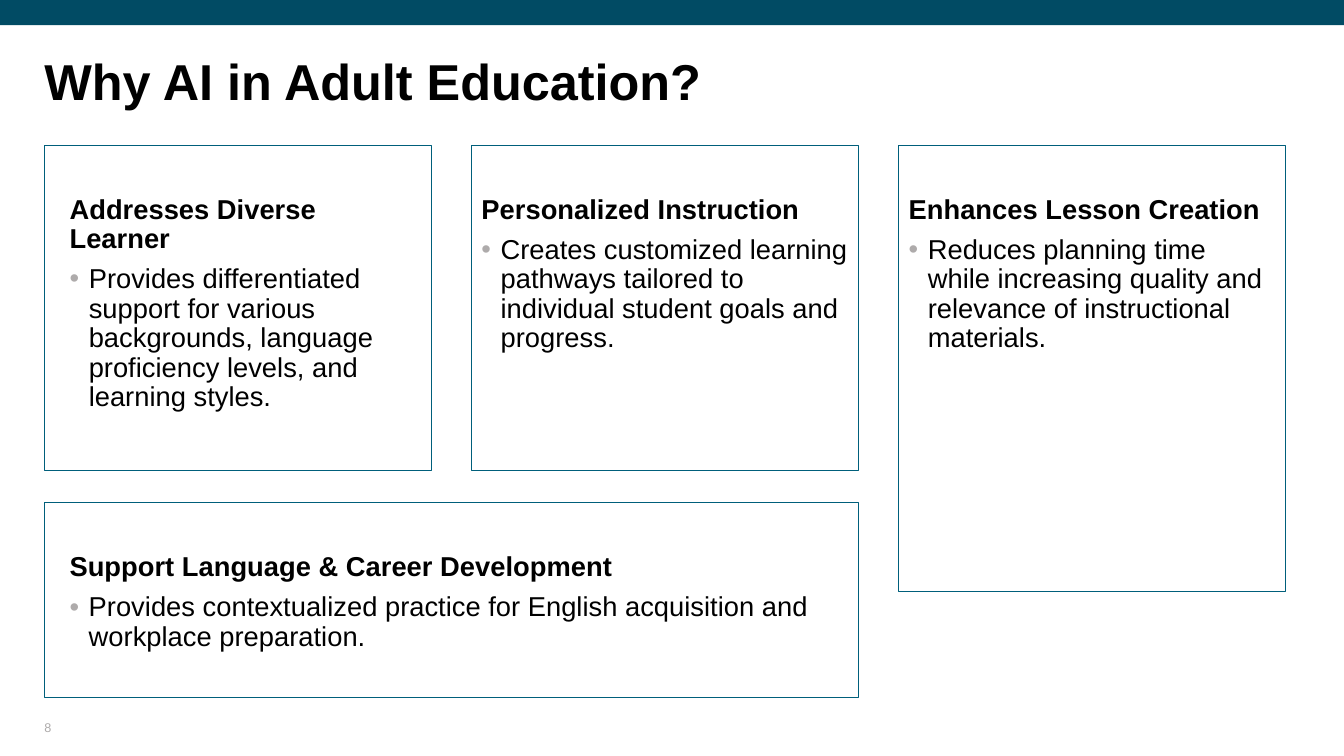
import lxml.etree
import pptx
import pptx.dml.color
import pptx.enum.shapes
import pptx.enum.text
import pptx.oxml.ns
import pptx.util

COLORS = {"band": "014B64", "border": "005F7B", "text": "000000", "muted": "AEABAB"}
WIDTH, HEIGHT = 13.33, 7.5
LEFT, TOP = 0.44, 1.44
COLUMN_GAP, ROW_GAP = 0.4, 0.32
COLUMN_STEP = (12.31 + COLUMN_GAP) / 3
ROW_STEP = 0.05

CARDS = [
    (0, 0, 1, 71, 0.25, "Addresses Diverse Learner",
     "Provides differentiated support for various backgrounds, language proficiency levels, and learning styles."),
    (1, 0, 1, 71, 0.1, "Personalized Instruction",
     "Creates customized learning pathways tailored to individual student goals and progress."),
    (2, 0, 1, 95, 0.1, "Enhances Lesson Creation",
     "Reduces planning time while increasing quality and relevance of instructional materials."),
    (0, 71, 2, 45, 0.25, "Support Language & Career Development",
     "Provides contextualized practice for English acquisition and workplace preparation."),
]


class SlideBuilder:
    """Hold the text style and current slide, and draw each kind of element."""

    def __init__(self, presentation):
        self.slide = presentation.slides.add_slide(presentation.slide_layouts[5])
        self.font_name = "Arial"

    def color(self, name):
        return pptx.dml.color.RGBColor.from_string(COLORS[name])

    def apply(self, target, values):
        for name, value in values.items():
            setattr(target, name, value)

    def place(self, shape, left, top, width, height):
        lengths = dict(left=left, top=top, width=width, height=height)
        self.apply(shape, {name: pptx.util.Inches(value) for name, value in lengths.items()})

    def frame(self, shape, insets, anchor="TOP"):
        sides = ("margin_left", "margin_top", "margin_right", "margin_bottom")
        values = {side: pptx.util.Inches(inset) for side, inset in zip(sides, insets)}
        values["word_wrap"] = True
        values["auto_size"] = pptx.enum.text.MSO_AUTO_SIZE.NONE
        values["vertical_anchor"] = pptx.enum.text.MSO_ANCHOR[anchor]
        self.apply(shape.text_frame, values)
        return shape.text_frame

    def add_text(self, paragraph, text, size, bold=False, color="text", spacing=0.9):
        self.apply(paragraph, {"alignment": pptx.enum.text.PP_ALIGN.LEFT, "line_spacing": spacing})
        run = paragraph.add_run()
        run.text = text
        self.apply(run.font, {"name": self.font_name, "size": pptx.util.Pt(size), "bold": bold})
        run.font.color.rgb = self.color(color)

    def bullet(self, paragraph):
        properties = paragraph._p.get_or_add_pPr()
        indent = pptx.util.Inches(0.19)
        properties.set("marL", str(indent))
        properties.set("indent", str(-indent))
        tag = pptx.oxml.ns.qn
        bullet_color = lxml.etree.SubElement(properties, tag("a:buClr"))
        lxml.etree.SubElement(bullet_color, tag("a:srgbClr"), val=COLORS["muted"])
        lxml.etree.SubElement(properties, tag("a:buFont"), typeface=self.font_name)
        lxml.etree.SubElement(properties, tag("a:buChar"), char="•")

    def rectangle(self, left, top, width, height, fill=None, border=None):
        kind = pptx.enum.shapes.MSO_SHAPE.RECTANGLE
        shape = self.slide.shapes.add_shape(kind, 0, 0, 0, 0)
        self.place(shape, left, top, width, height)
        shape.shadow.inherit = False
        if fill:
            shape.fill.solid()
            shape.fill.fore_color.rgb = self.color(fill)
        else:
            shape.fill.background()
        if border:
            shape.line.color.rgb = self.color(border)
            shape.line.width = pptx.util.Pt(0.75)
        else:
            shape.line.fill.background()
        return shape

    def title(self, text):
        shape = self.slide.shapes.title
        self.place(shape, LEFT, 0.57, 12.32, 1.27)
        self.add_text(self.frame(shape, (0, 0, 0, 0)).paragraphs[0], text, 36, bold=True)

    def card(self, column, row, columns, rows, inset, heading, body):
        shape = self.rectangle(
            LEFT + column * COLUMN_STEP,
            TOP + row * ROW_STEP,
            columns * COLUMN_STEP - COLUMN_GAP,
            rows * ROW_STEP - ROW_GAP,
            border="border",
        )
        text_frame = self.frame(shape, (inset, 0.5, inset, 0.05))
        self.add_text(text_frame.paragraphs[0], heading, 19.5, bold=True)
        paragraph = text_frame.add_paragraph()
        paragraph.space_before = pptx.util.Pt(7.5)
        self.bullet(paragraph)
        self.add_text(paragraph, body, 19.5)

    def page_number(self, text):
        shape = self.slide.shapes.add_textbox(0, 0, 0, 0)
        self.place(shape, LEFT, 7.05, 3, 0.24)
        text_frame = self.frame(shape, (0, 0, 0, 0), "BOTTOM")
        self.add_text(text_frame.paragraphs[0], text, 9, color="muted", spacing=1.0)


def main():
    presentation = pptx.Presentation()
    presentation.slide_width = pptx.util.Inches(WIDTH)
    presentation.slide_height = pptx.util.Inches(HEIGHT)
    builder = SlideBuilder(presentation)
    builder.rectangle(0, 0, WIDTH, HEIGHT / 30, fill="band")
    builder.title("Why AI in Adult Education?")
    for card in CARDS:
        builder.card(*card)
    builder.page_number("8")
    presentation.save("out.pptx")


if __name__ == "__main__":
    main()
